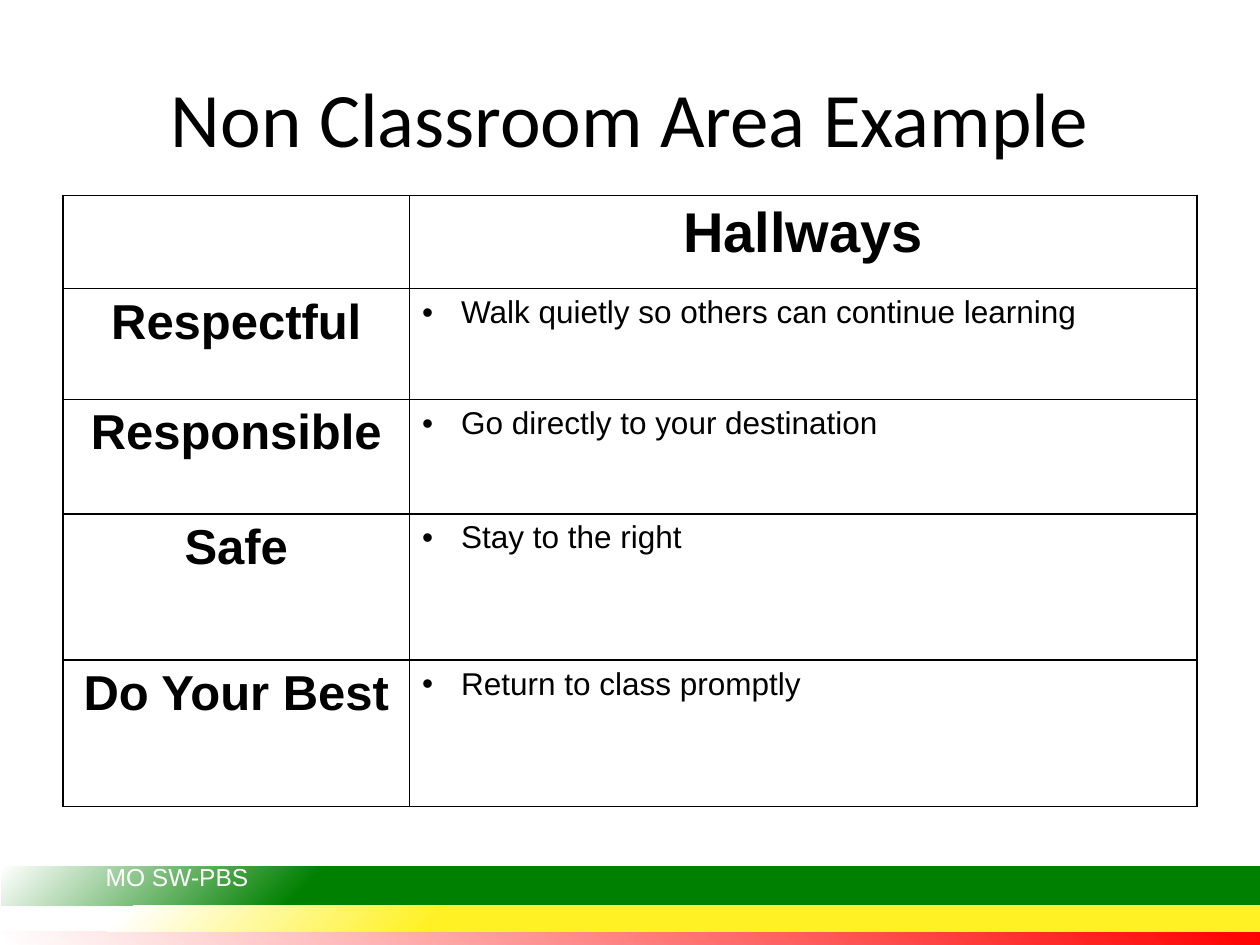
from lxml.etree import SubElement
from pptx import Presentation
from pptx.dml.color import RGBColor
from pptx.enum.shapes import MSO_SHAPE
from pptx.enum.text import MSO_ANCHOR, PP_ALIGN
from pptx.oxml import parse_xml
from pptx.oxml.ns import nsdecls, qn
from pptx.util import Inches, Pt

BLACK = RGBColor(0x00, 0x00, 0x00)
WHITE = RGBColor(0xFF, 0xFF, 0xFF)
RED = RGBColor(0xFF, 0x00, 0x00)
GREEN = RGBColor(0x00, 0x80, 0x00)
YELLOW = RGBColor(0xFF, 0xF1, 0x23)

TITLE = "Non Classroom Area Example"
FOOTER = "MO SW-PBS"
AREA = "Hallways"
EXPECTATIONS = [
    ("Respectful", "Walk quietly so others can continue learning"),
    ("Responsible", "Go directly to your destination"),
    ("Safe", "Stay to the right"),
    ("Do Your Best", "Return to class promptly"),
]
COLUMN_WIDTHS = [2.75, 6.25]
ROW_HEIGHTS = [0.74, 0.88, 0.91, 1.16, 1.16]
BULLET_INDENT = Inches(0.31)

# top, height, colour, solid until, white from, focus edges
BANDS = [
    (7.39, 0.12, RED, 0, 100, 'l="100000" b="100000"'),
    (6.88, 0.31, GREEN, 75, 100, 'l="100000" t="100000"'),
    (7.19, 0.2, YELLOW, 65, 90, 'l="100000" t="100000"'),
]


def add_run(paragraph, text, size, font="Arial", color=BLACK, bold=False):
    run = paragraph.add_run()
    run.text = text
    run.font.size = Pt(size)
    run.font.name = font
    run.font.bold = bold
    run.font.color.rgb = color
    return run


def add_text(slide, box, text, size, font, color, anchor, alignment):
    frame = slide.shapes.add_textbox(*map(Inches, box)).text_frame
    frame.word_wrap = True
    frame.vertical_anchor = anchor
    paragraph = frame.paragraphs[0]
    paragraph.alignment = alignment
    return add_run(paragraph, text, size, font, color)


def add_band(slide, top, height, color, solid_until, white_from, focus):
    band = slide.shapes.add_shape(
        MSO_SHAPE.RECTANGLE, Inches(0.01), Inches(top), Inches(10), Inches(height))
    band.shadow.inherit = False
    band.line.fill.background()
    gradient = parse_xml(
        f'<a:gradFill {nsdecls("a")} rotWithShape="1"><a:gsLst>'
        f'<a:gs pos="{solid_until * 1000}"><a:srgbClr val="{color}"/></a:gs>'
        f'<a:gs pos="{white_from * 1000}"><a:srgbClr val="{WHITE}"/></a:gs>'
        f'</a:gsLst><a:path path="circle"><a:fillToRect {focus}/></a:path></a:gradFill>')
    band._element.spPr.find(qn("a:prstGeom")).addnext(gradient)


def add_text_shadow(run):
    shadow = parse_xml(
        f'<a:effectLst {nsdecls("a")}><a:outerShdw blurRad="38100" dist="38100" dir="2700000">'
        f'<a:srgbClr val="{BLACK}"><a:alpha val="43000"/></a:srgbClr>'
        '</a:outerShdw></a:effectLst>')
    run.font._element.find(qn("a:solidFill")).addnext(shadow)


def style_cell(cell):
    properties = cell._tc.get_or_add_tcPr()
    for side in ("lnL", "lnR", "lnT", "lnB"):
        line = SubElement(properties, qn(f"a:{side}"), w=str(Pt(1)))
        fill = SubElement(line, qn("a:solidFill"))
        SubElement(fill, qn("a:srgbClr"), val=str(BLACK))
    cell.fill.background()


def add_heading(cell, text, size):
    paragraph = cell.text_frame.paragraphs[0]
    paragraph.alignment = PP_ALIGN.CENTER
    add_run(paragraph, text, size, bold=True)


def add_bullet(cell, text):
    paragraph = cell.text_frame.paragraphs[0]
    properties = paragraph._p.get_or_add_pPr()
    properties.set("marL", str(BULLET_INDENT))
    properties.set("indent", str(-BULLET_INDENT))
    color = SubElement(properties, qn("a:buClr"))
    SubElement(color, qn("a:srgbClr"), val=str(BLACK))
    SubElement(properties, qn("a:buFont"), typeface="Arial")
    SubElement(properties, qn("a:buChar"), char="•")
    add_run(paragraph, text, 18)


def add_expectations(slide):
    table = slide.shapes.add_table(
        len(ROW_HEIGHTS), len(COLUMN_WIDTHS), Inches(0.5), Inches(1.55),
        Inches(sum(COLUMN_WIDTHS)), Inches(sum(ROW_HEIGHTS))).table
    table.first_row = False
    table.horz_banding = False
    for column, width in zip(table.columns, COLUMN_WIDTHS):
        column.width = Inches(width)
    for row, height in zip(table.rows, ROW_HEIGHTS):
        row.height = Inches(height)
    for cell in table.iter_cells():
        style_cell(cell)
    add_heading(table.cell(0, 1), AREA, 32)
    for row, (expectation, behavior) in enumerate(EXPECTATIONS, start=1):
        add_heading(table.cell(row, 0), expectation, 28)
        add_bullet(table.cell(row, 1), behavior)


def main():
    presentation = Presentation()
    presentation.slide_width = Inches(10)
    presentation.slide_height = Inches(7.5)
    slide = presentation.slides.add_slide(presentation.slide_layouts[6])
    for band in BANDS:
        add_band(slide, *band)
    footer = add_text(slide, (0.74, 6.79, 1.92, 0.4), FOOTER, 14, "Arial", WHITE,
                      MSO_ANCHOR.TOP, PP_ALIGN.LEFT)
    add_text_shadow(footer)
    add_text(slide, (0.5, 0.3, 9, 1.25), TITLE, 44, "Calibri", BLACK,
             MSO_ANCHOR.MIDDLE, PP_ALIGN.CENTER)
    add_expectations(slide)
    presentation.save("out.pptx")


if __name__ == "__main__":
    main()
